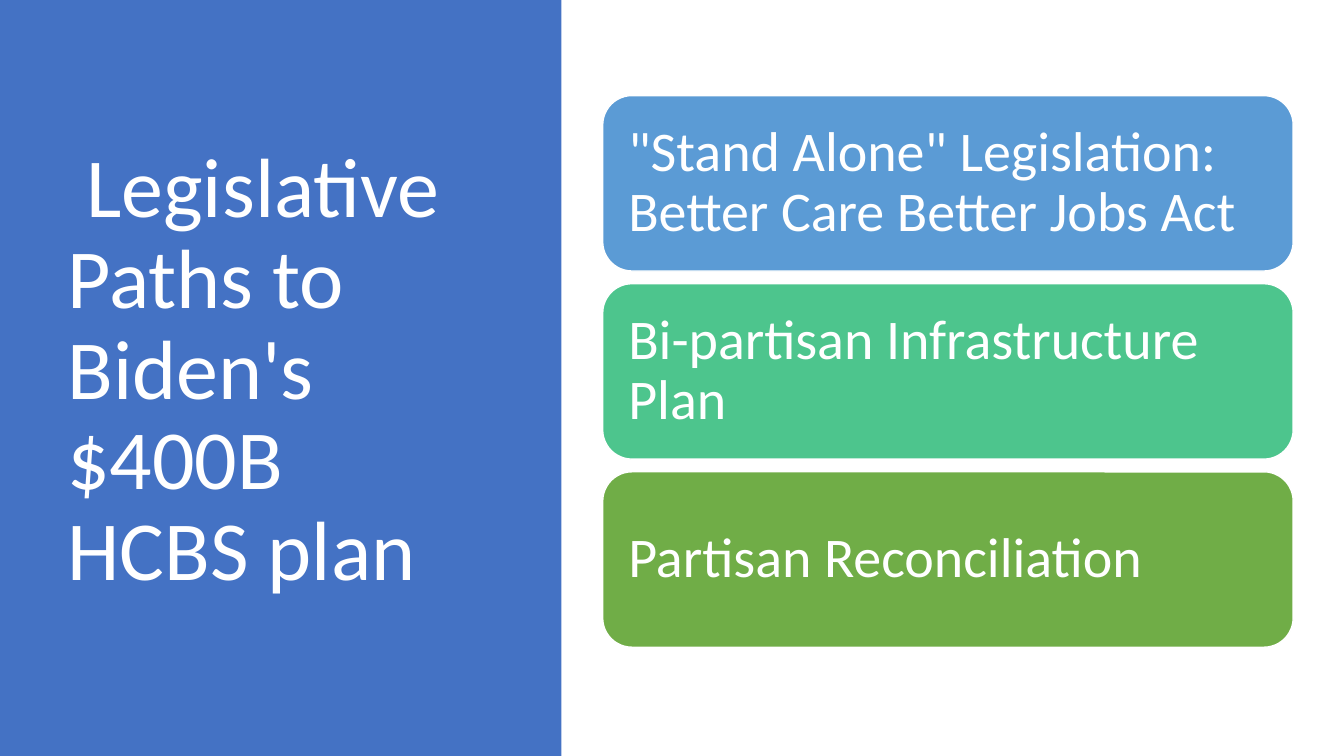
from pptx import Presentation
from pptx import util as u
from pptx.dml.color import RGBColor
from pptx.enum import shapes, text

WHITE = RGBColor(0xFF, 0xFF, 0xFF)
BLUE = RGBColor(0x44, 0x72, 0xC4)
SKY = RGBColor(0x5B, 0x9B, 0xD5)
MINT = RGBColor(0x4D, 0xC5, 0x8D)
GREEN = RGBColor(0x70, 0xAD, 0x47)

TITLE = " Legislative Paths to Biden's $400B HCBS plan"
PATHS = [
    ('"Stand Alone" Legislation: Better Care Better Jobs Act', SKY),
    ("Bi-partisan Infrastructure Plan", MINT),
    ("Partisan Reconciliation", GREEN),
]


def apply(target, values):
    """Set each named attribute of the target."""
    for name, value in values.items():
        setattr(target, name, value)


def write(shape, wording, size, inset_x, inset_y):
    """Fill a shape with one left-aligned, vertically centred white paragraph."""
    frame = shape.text_frame
    apply(frame, {
        "word_wrap": True,
        "auto_size": text.MSO_AUTO_SIZE.NONE,
        "vertical_anchor": text.MSO_ANCHOR.MIDDLE,
        "margin_left": inset_x, "margin_right": inset_x,
        "margin_top": inset_y, "margin_bottom": inset_y,
    })
    para = frame.paragraphs[0]
    apply(para, {"alignment": text.PP_ALIGN.LEFT, "line_spacing": 0.9})
    span = para.add_run()
    span.text = wording
    apply(span.font, {"name": "Calibri", "size": u.Pt(size)})
    span.font.color.rgb = WHITE


def add_block(page, kind, box, fill):
    """Add a flat filled shape without an outline colour of its own."""
    block = page.shapes.add_shape(kind, *box)
    block.shadow.inherit = False
    block.fill.solid()
    block.fill.fore_color.rgb = fill
    block.line.fill.background()
    return block


def add_title_panel(page, left, top, width, height):
    """Place the blue panel with the slide title on it."""
    panel = add_block(page, shapes.MSO_SHAPE.RECTANGLE, (left, top, width, height), BLUE)
    title = page.shapes.title
    title.element.addprevious(panel.element)
    apply(title, {
        "left": left + u.Cm(1.45), "top": top + u.Cm(1.73),
        "width": width - u.Cm(3.58), "height": height - u.Cm(3.76),
    })
    write(title, TITLE, 60, u.Cm(0.25), u.Cm(0.13))


def add_path_cards(page, left, top, width, height):
    """Stack one rounded card per legislative path inside the box."""
    gap = u.Cm(0.32)
    card_height = (height - gap * (len(PATHS) - 1)) // len(PATHS)
    for index, (wording, fill) in enumerate(PATHS):
        box = (left, top + index * (card_height + gap), width, card_height)
        card = add_block(page, shapes.MSO_SHAPE.ROUNDED_RECTANGLE, box, fill)
        card.line.color.rgb = WHITE
        card.line.width = u.Pt(1)
        write(card, wording, 40, u.Cm(0.43), u.Cm(0.43))


def main():
    """Build the slide and save the deck."""
    deck = Presentation()
    apply(deck, {"slide_width": u.Cm(33.87), "slide_height": u.Cm(19.05)})
    page = deck.slides.add_slide(deck.slide_layouts[5])
    add_title_panel(page, u.Cm(0), u.Cm(0), u.Cm(14.15), deck.slide_height)
    add_path_cards(page, u.Cm(15.19), u.Cm(2.41), u.Cm(17.4), u.Cm(13.9))
    deck.save("out.pptx")


if __name__ == "__main__":
    main()
